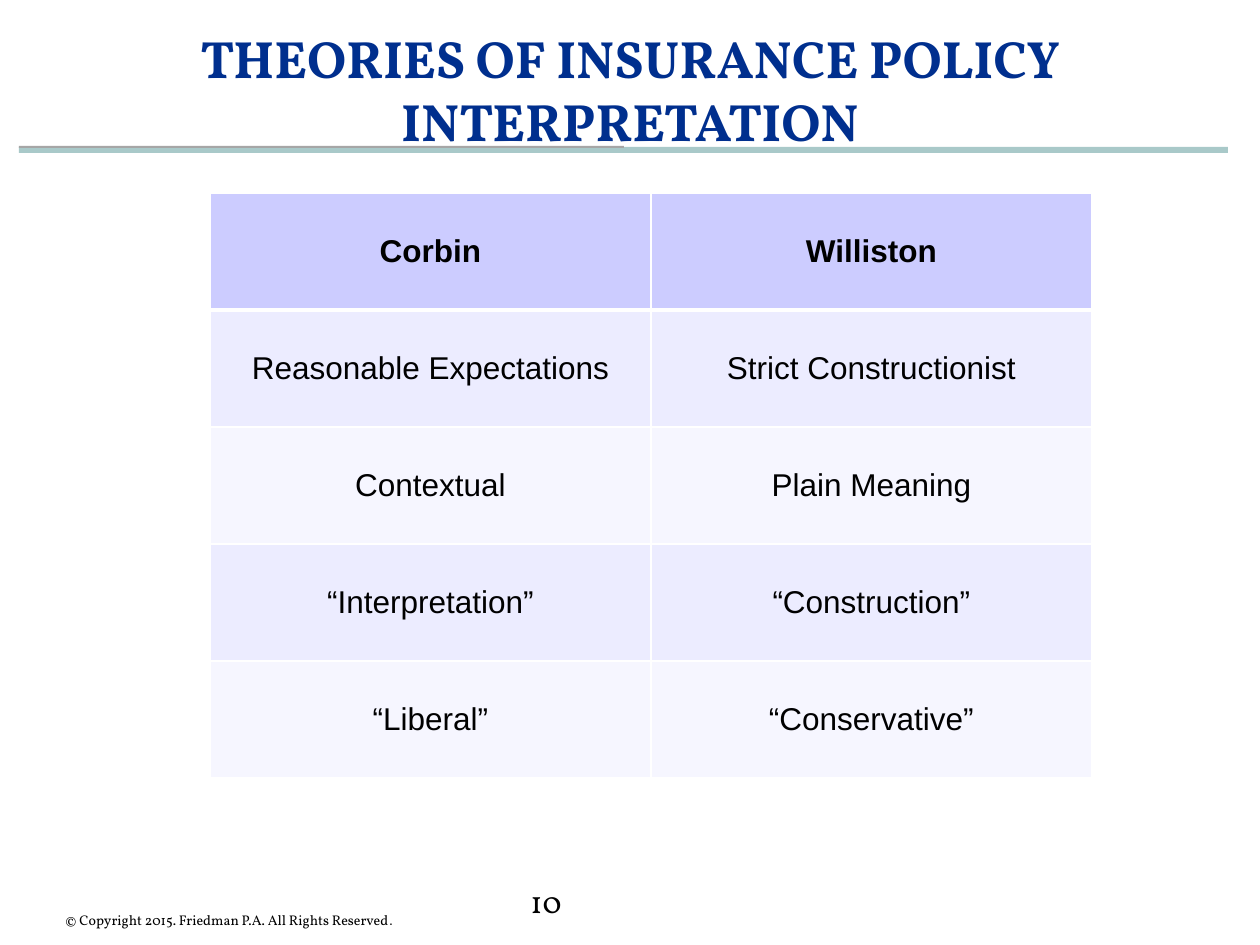
from lxml import etree
from pptx import Presentation
from pptx.dml.color import RGBColor
from pptx.enum.shapes import MSO_SHAPE
from pptx.enum.text import MSO_ANCHOR as ANCHOR, PP_ALIGN as ALIGN
from pptx.oxml.ns import qn
from pptx.util import Emu, Pt

PX = 914400 // 126
SLIDE_SIZE = (1260, 945)
COLORS = {"navy": "002F8E", "black": "000000", "white": "FFFFFF",
          "rule": "A9C9C9", "rule_edge": "A6A6A6",
          "header": "CCCCFF", "band_odd": "ECECFF", "band_even": "F6F6FF"}

ROWS = [("Corbin", "Williston"),
        ("Reasonable Expectations", "Strict Constructionist"),
        ("Contextual", "Plain Meaning"),
        ("“Interpretation”", "“Construction”"),
        ("“Liberal”", "“Conservative”")]
TABLE_LEFT, TABLE_TOP, COLUMN_WIDTH, ROW_HEIGHT = 210, 193, 441, 117

RULES = [((19, 147, 1209, 6), "rule"), ((19, 146, 605, 2), "rule_edge")]

# box, runs of (text, font), size, colour, bold, alignment, anchor, line pitch
TEXTS = [
    ((42, 20, 1176, 138), [("THEORIES OF INSURANCE POLICY INTERPRETATION", "Vollkorn")],
     30, "navy", True, ALIGN.CENTER, ANCHOR.TOP, 36),
    ((53, 861, 542, 67),
     [("© Copyright 2015. Friedman P.A. All Rights Reserved", "Vollkorn"), (".", "Arial")],
     8, "black", False, ALIGN.LEFT, ANCHOR.BOTTOM, None),
    ((518, 876, 69, 54), [("10", "Vollkorn")],
     18, "black", False, ALIGN.LEFT, ANCHOR.TOP, None),
]


def px(*values):
    return [Emu(value * PX) for value in values]


def paint(fill, color):
    fill.solid()
    fill.fore_color.rgb = RGBColor.from_string(COLORS[color])


def add_run(paragraph, text, color, **font_values):
    run = paragraph.add_run()
    run.text = text
    for name, value in font_values.items():
        setattr(run.font, name, value)
    run.font.color.rgb = RGBColor.from_string(COLORS[color])


def add_rule(slide, box, color):
    shape = slide.shapes.add_shape(MSO_SHAPE.RECTANGLE, *px(*box))
    shape.shadow.inherit = False
    shape.line.fill.background()
    paint(shape.fill, color)


def add_text(slide, box, runs, size, color, bold, alignment, anchor, pitch):
    frame = slide.shapes.add_textbox(*px(*box)).text_frame
    frame.word_wrap = True
    frame.vertical_anchor = anchor
    if anchor == ANCHOR.BOTTOM:
        frame.margin_bottom = 0
    paragraph = frame.paragraphs[0]
    paragraph.alignment = alignment
    if pitch:
        paragraph.line_spacing = Pt(pitch)
    for text, font in runs:
        add_run(paragraph, text, color, name=font, size=Pt(size), bold=bold)


def set_borders(cell, widths):
    """Put white borders before the cell's fill, as the schema orders them."""
    properties = cell._tc.get_or_add_tcPr()
    for index, (side, width) in enumerate(widths.items()):
        line = etree.Element(qn(f"a:ln{side}"), w=str(Pt(width)))
        fill = etree.SubElement(line, qn("a:solidFill"))
        etree.SubElement(fill, qn("a:srgbClr"), val=COLORS["white"])
        properties.insert(index, line)


def add_theory_table(slide):
    row_count, column_count = len(ROWS), len(ROWS[0])
    table = slide.shapes.add_table(
        row_count, column_count,
        *px(TABLE_LEFT, TABLE_TOP, COLUMN_WIDTH * column_count, ROW_HEIGHT * row_count)).table
    for column in table.columns:
        column.width = px(COLUMN_WIDTH)[0]
    for r, labels in enumerate(ROWS):
        table.rows[r].height = px(ROW_HEIGHT)[0]
        color = "header" if r == 0 else ("band_even", "band_odd")[r % 2]
        for c, label in enumerate(labels):
            cell = table.cell(r, c)
            cell.vertical_anchor = ANCHOR.MIDDLE
            paint(cell.fill, color)
            set_borders(cell, {"L": 1, "R": 1, "T": 3 if r == 1 else 1, "B": 3 if r == 0 else 1})
            paragraph = cell.text_frame.paragraphs[0]
            paragraph.alignment = ALIGN.CENTER
            add_run(paragraph, label, "black", name="Arial", size=Pt(18), bold=r == 0)


def main():
    presentation = Presentation()
    presentation.slide_width, presentation.slide_height = px(*SLIDE_SIZE)
    slide = presentation.slides.add_slide(presentation.slide_layouts[6])
    paint(slide.background.fill, "white")
    for box, color in RULES:
        add_rule(slide, box, color)
    for text in TEXTS:
        add_text(slide, *text)
    add_theory_table(slide)
    presentation.save("out.pptx")


if __name__ == "__main__":
    main()
